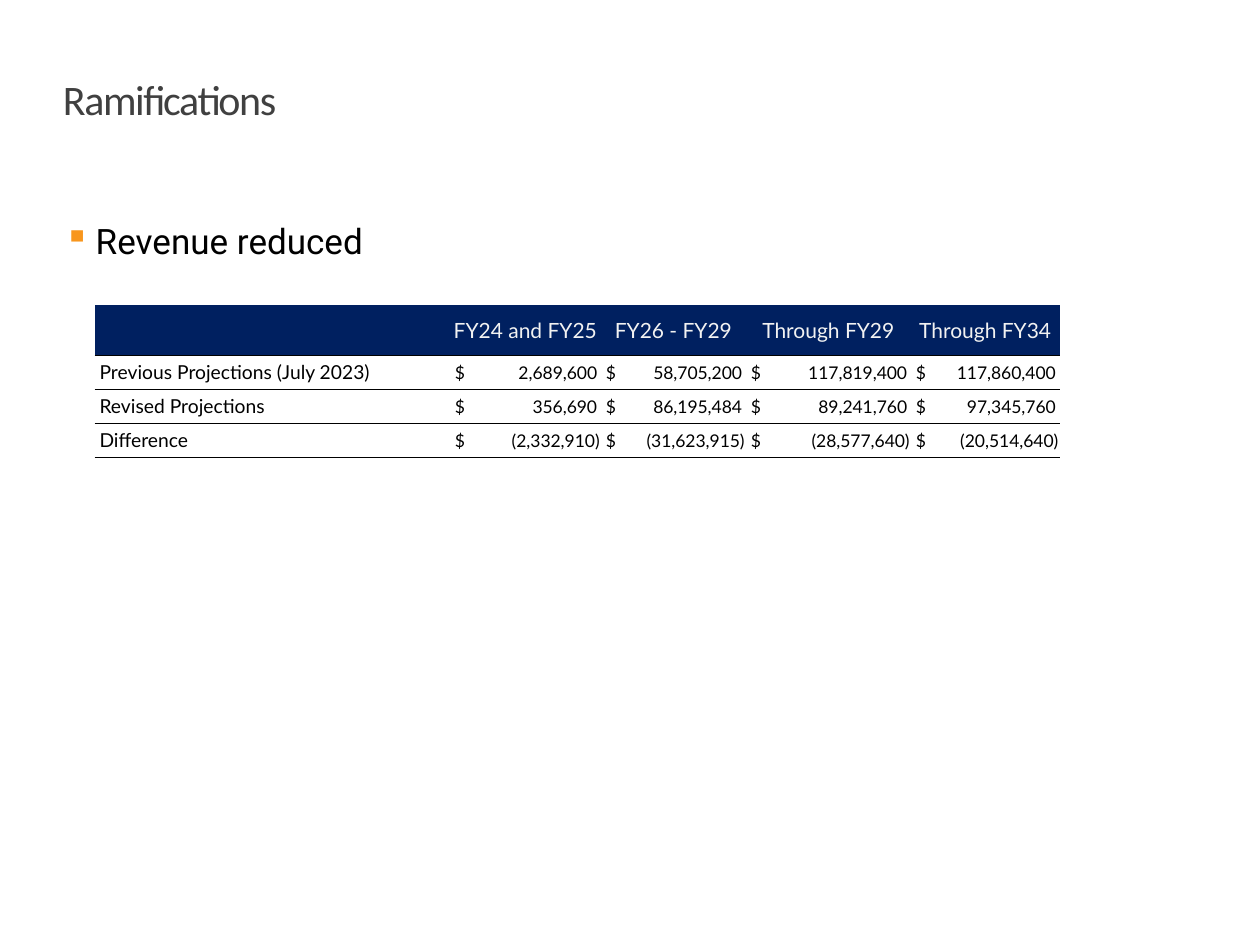
import typing

import lxml.etree
import pptx
import pptx.dml.color
import pptx.enum.text
import pptx.oxml.ns
import pptx.util

Inches = pptx.util.Inches
Pt = pptx.util.Pt
Align = pptx.enum.text.PP_ALIGN
qn = pptx.oxml.ns.qn

NAVY, BLACK = "002060", "000000"
PLAIN = "{2D5ABB26-0587-4C30-8999-92F81FD0307C}"  # table style without grid
LEFT = 0.04  # cell inset


class Line(typing.NamedTuple):
    label: str
    sums: tuple[str, ...]
    gap: float  # from the figures to the right cell edge


HEADS = ("", "FY24 and FY25", "FY26 - FY29", "Through FY29", "Through FY34")
WIDTHS = (2.82, 1.2, 1.15, 1.31, 1.18)
LINES = (
    Line("Previous Projections (July 2023)",
         ("2,689,600", "58,705,200", "117,819,400", "117,860,400"), 0.03),
    Line("Revised Projections",
         ("356,690", "86,195,484", "89,241,760", "97,345,760"), 0.03),
    Line("Difference",
         ("(2,332,910)", "(31,623,915)", "(28,577,640)", "(20,514,640)"), 0.01),
)


def rgb(code: str) -> pptx.dml.color.RGBColor:
    return pptx.dml.color.RGBColor.from_string(code)


def add(node, tag: str, **attrs: str):
    sub = lxml.etree.SubElement(node, qn(tag))
    for key, val in attrs.items():
        sub.set(key, val)
    return sub


def style(par, font: str, size: float, color: str) -> None:
    for run in par.runs:
        run.font.name = font
        run.font.size = Pt(size)
        run.font.color.rgb = rgb(color)


def add_tab(par, pos: float, algn: str) -> None:
    tabs = add(par._p.get_or_add_pPr(), "a:tabLst")
    add(tabs, "a:tab", pos=str(Inches(pos)), algn=algn)


def add_text(slide, text: str, box: tuple[float, ...], before: float):
    shape = slide.shapes.add_textbox(*map(Inches, box))
    frame = shape.text_frame
    frame.word_wrap = True
    frame.auto_size = pptx.enum.text.MSO_AUTO_SIZE.SHAPE_TO_FIT_TEXT
    frame.margin_left = frame.margin_right = frame.margin_bottom = 0
    frame.margin_top = Inches(0.01)
    frame.text = text
    par = frame.paragraphs[0]
    par.space_before = Pt(before)
    return par


def add_bullet(par) -> None:
    props = par._p.get_or_add_pPr()
    props.set("marL", str(Inches(0.27)))
    props.set("indent", str(Inches(-0.25)))
    add(add(props, "a:buClr"), "a:srgbClr", val="F8961D")
    add(props, "a:buChar", char="▪")
    add_tab(par, 0.27, "l")


def set_cell(cell, text: str, size: float, color: str, left: float = LEFT):
    cell.margin_left = Inches(left)
    cell.margin_right = cell.margin_top = cell.margin_bottom = 0
    cell.vertical_anchor = pptx.enum.text.MSO_ANCHOR.MIDDLE
    rule = add(cell._tc.get_or_add_tcPr(), "a:lnB", w=str(Pt(0.5)))
    add(add(rule, "a:solidFill"), "a:srgbClr", val=BLACK)
    cell.fill.background()
    cell.text_frame.text = text
    par = cell.text_frame.paragraphs[0]
    style(par, "Lato", size, color)
    return par


def add_grid(slide) -> None:
    table = slide.shapes.add_table(
        len(LINES) + 1, len(HEADS), Inches(0.75), Inches(2.42),
        Inches(sum(WIDTHS)), Inches(1.21)).table
    table.horz_banding = False
    table._tbl.tblPr.find(qn("a:tableStyleId")).text = PLAIN
    for col, width in zip(table.columns, WIDTHS):
        col.width = Inches(width)
    for num, row in enumerate(table.rows):
        row.height = Inches(0.27 if num else 0.4)

    # Header row
    for num, head in enumerate(HEADS):
        cell = table.cell(0, num)
        par = set_cell(cell, head, 12, "F2F2F2", left=0)
        par.alignment = Align.CENTER
        cell.fill.solid()
        cell.fill.fore_color.rgb = rgb(NAVY)

    # Projection rows: dollar sign at left, figure on a right tab
    for num, line in enumerate(LINES, 1):
        set_cell(table.cell(num, 0), line.label, 11, BLACK)
        for col, value in enumerate(line.sums, 1):
            par = set_cell(table.cell(num, col), f"$\t{value}", 10, BLACK)
            add_tab(par, WIDTHS[col] - LEFT - line.gap, "r")


def main() -> None:
    deck = pptx.Presentation()
    deck.slide_width, deck.slide_height = Inches(10), Inches(7.5)
    slide = deck.slides.add_slide(deck.slide_layouts[6])

    # Title
    title = add_text(slide, "Ramifications", (0.49, 0.57, 3.14, 0.43), 1)
    title._p.get_or_add_pPr().set("marL", str(Inches(0.01)))
    style(title, "Calibri", 24, "404040")
    title.runs[0].font._element.set("spc", "-80")

    # Bullet
    point = add_text(slide, "Revenue reduced", (0.49, 1.73, 8.96, 0.35), 18)
    add_bullet(point)
    style(point, "Roboto", 20, BLACK)

    # Table
    add_grid(slide)
    deck.save("out.pptx")


if __name__ == "__main__":
    main()
